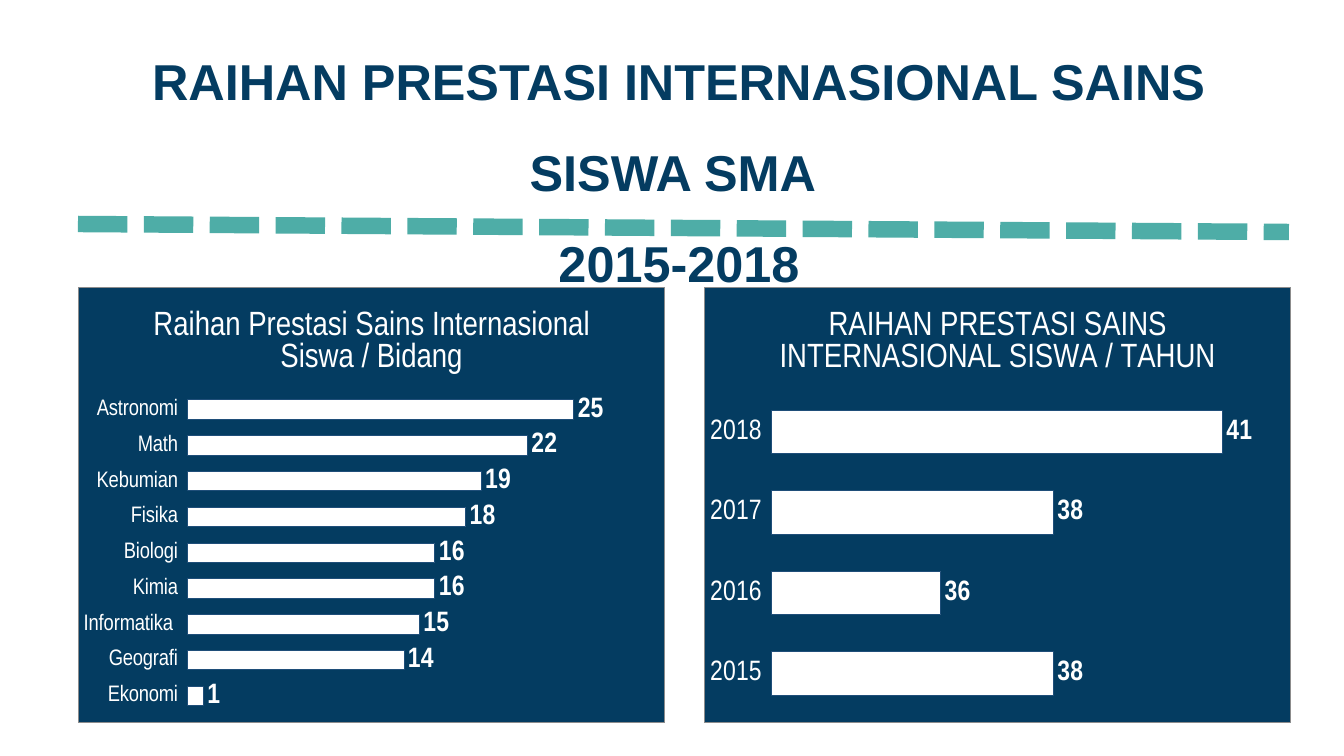
from dataclasses import dataclass

from lxml import etree
from pptx import Presentation
from pptx.chart.data import CategoryChartData
from pptx.dml.color import RGBColor
from pptx.enum.chart import XL_CHART_TYPE, XL_LABEL_POSITION, XL_TICK_LABEL_POSITION, XL_TICK_MARK
from pptx.enum.dml import MSO_LINE
from pptx.enum.shapes import MSO_CONNECTOR
from pptx.enum.text import MSO_ANCHOR, PP_ALIGN
from pptx.oxml import parse_xml
from pptx.oxml.ns import nsdecls, qn
from pptx.util import Emu, Pt

BAR = XL_CHART_TYPE.BAR_CLUSTERED
OUTSIDE = XL_LABEL_POSITION.OUTSIDE_END
LABELS_LOW = XL_TICK_LABEL_POSITION.LOW
NO_TICK = XL_TICK_MARK.NONE
CENTER = PP_ALIGN.CENTER
TOP = MSO_ANCHOR.TOP
STRAIGHT = MSO_CONNECTOR.STRAIGHT
SQUARE_DOT = MSO_LINE.SQUARE_DOT
BLANK = 6


@dataclass(frozen=True)
class Theme:
    navy: str = "043C61"
    teal: str = "4EADA7"
    white: str = "FFFFFF"
    bar_edge: str = "1F4E79"
    panel_edge: str = "8C8C8C"
    heading_font: str = "Arial"
    chart_font: str = "Arial Narrow"
    heading: int = 36
    chart_title: int = 24
    label: int = 20
    small_label: int = 16


THEME = Theme()


def px(n):
    return Emu(round(n * 914400 / 100.8))


def rgb(color):
    return RGBColor.from_string(color)


def style_font(font, size, color, name, bold=False):
    font.size, font.name, font.bold = Pt(size), name, bold
    font.color.rgb = rgb(color)


def add_text(s, lines, box, *, size, color, name, bold=False, spacing=1.0):
    tf = s.shapes.add_textbox(*map(px, box)).text_frame
    tf.word_wrap = True
    tf.vertical_anchor = TOP
    for i, line in enumerate(lines):
        p = tf.paragraphs[0] if i == 0 else tf.add_paragraph()
        p.alignment, p.line_spacing = CENTER, spacing
        r = p.add_run()
        r.text = line
        style_font(r.font, size, color, name, bold)


def add_dotted_line(s, start, end, color, width):
    line = s.shapes.add_connector(STRAIGHT, *map(px, start + end))
    line.line.color.rgb = rgb(color)
    line.line.width = Pt(width)
    line.line.dash_style = SQUARE_DOT
    etree.SubElement(line._element.spPr, qn("a:effectLst"))


def fill_panel(chart, fill, edge):
    panel = parse_xml(
        f'<c:spPr {nsdecls("c", "a")}>'
        f'<a:solidFill><a:srgbClr val="{fill}"/></a:solidFill>'
        f'<a:ln w="6350"><a:solidFill><a:srgbClr val="{edge}"/></a:solidFill></a:ln>'
        '</c:spPr>')
    chart._chartSpace.find(qn("c:chart")).addnext(panel)


def place_plot(chart, x, y, w, h):
    area = chart._chartSpace.find(qn("c:chart")).find(qn("c:plotArea"))
    for old in area.findall(qn("c:layout")):
        area.remove(old)
    sizes = "".join(f'<c:{k} val="{v}"/>' for k, v in zip("xywh", (x, y, w, h)))
    area.insert(0, parse_xml(
        f'<c:layout {nsdecls("c")}><c:manualLayout><c:layoutTarget val="inner"/>'
        f'<c:xMode val="edge"/><c:yMode val="edge"/>{sizes}'
        '</c:manualLayout></c:layout>'))


def add_bar_panel(s, box, title, values, *, label_size, low, high, plot):
    t = THEME
    data = CategoryChartData()
    data.categories = list(values)
    data.add_series("Series 1", list(values.values()))
    chart = s.shapes.add_chart(BAR, *map(px, box), data).chart
    style_font(chart.font, t.label, t.white, t.chart_font)
    fill_panel(chart, t.navy, t.panel_edge)
    place_plot(chart, *plot)
    chart.has_legend = False

    # Title
    chart.has_title = True
    p = chart.chart_title.text_frame.paragraphs[0]
    r = p.add_run()
    r.text = title
    style_font(r.font, t.chart_title, t.white, t.chart_font)
    chart.chart_title.include_in_layout = False

    # Axes
    names, scale = chart.category_axis, chart.value_axis
    names.major_tick_mark = names.minor_tick_mark = NO_TICK
    names.tick_label_position = LABELS_LOW
    names.format.line.fill.background()
    style_font(names.tick_labels.font, label_size, t.white, t.chart_font)
    scale.minimum_scale, scale.maximum_scale = low, high
    scale.has_major_gridlines = False
    scale.visible = False

    # Bars and their values
    bars = chart.plots[0]
    bars.gap_width = 84
    bars.vary_by_categories = False
    series = bars.series[0]
    series.format.fill.solid()
    series.format.fill.fore_color.rgb = rgb(t.white)
    series.format.line.color.rgb = rgb(t.bar_edge)
    series.format.line.width = Pt(0.75)
    labels = series.data_labels
    labels.show_value = True
    labels.position = OUTSIDE
    style_font(labels.font, t.label, t.white, t.chart_font, bold=True)


def main():
    prs = Presentation()
    prs.slide_width, prs.slide_height = px(1344), px(756)
    s = prs.slides.add_slide(prs.slide_layouts[BLANK])

    # Heading
    add_text(s, ["RAIHAN PRESTASI INTERNASIONAL SAINS SISWA SMA ", "2015-2018"],
             (57, 15, 1244, 194), size=THEME.heading, color=THEME.navy,
             name=THEME.heading_font, bold=True, spacing=1.5)
    add_dotted_line(s, (78, 224), (1289, 232), THEME.teal, 11.75)

    # Achievements by year and by subject
    top, width, height = 287, 587, 436
    years = {"2015": 38, "2016": 36, "2017": 38, "2018": 41}
    add_bar_panel(s, (704, top, width, height),
                  "RAIHAN PRESTASI SAINS INTERNASIONAL SISWA / TAHUN", years,
                  label_size=THEME.label, low=33, high=42,
                  plot=(0.115, 0.24, 0.865, 0.74))
    subjects = {"Ekonomi": 1, "Geografi": 14, "Informatika ": 15, "Kimia": 16, "Biologi": 16,
                "Fisika": 18, "Kebumian": 19, "Math": 22, "Astronomi": 25}
    add_bar_panel(s, (78, top, width, height),
                  "Raihan Prestasi Sains Internasional Siswa / Bidang", subjects,
                  label_size=THEME.small_label, low=0, high=30,
                  plot=(0.187, 0.24, 0.79, 0.74))

    prs.save("out.pptx")


if __name__ == "__main__":
    main()
